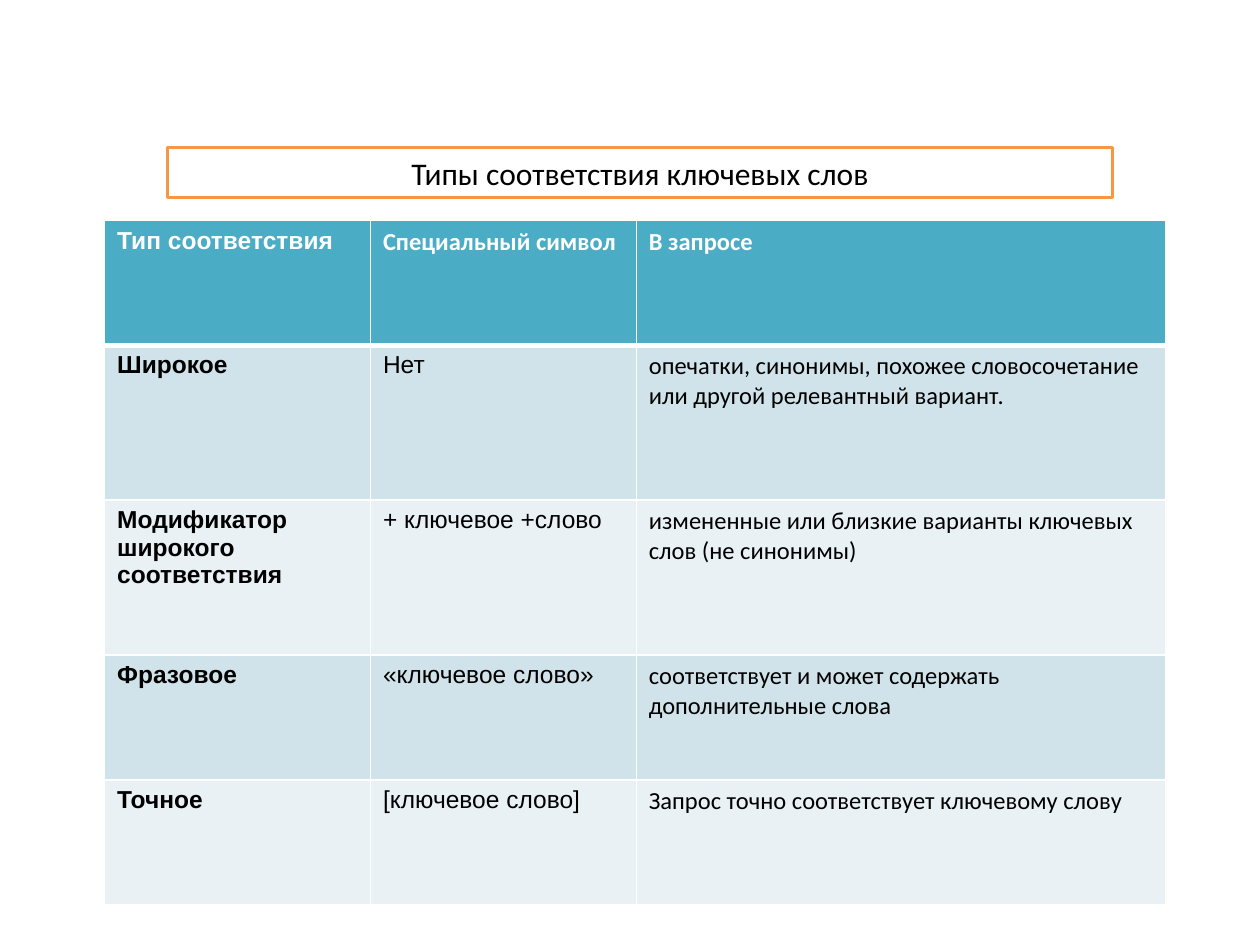
from lxml.etree import SubElement
from pptx import Presentation
from pptx.dml.color import RGBColor
from pptx.enum.shapes import MSO_SHAPE
from pptx.enum.text import MSO_ANCHOR, PP_ALIGN
from pptx.oxml.ns import qn
from pptx.util import Inches, Pt

TITLE = "Типы соответствия ключевых слов"
ROWS = [
    ("Тип соответствия", "Специальный символ", "В запросе"),
    ("Широкое", "Нет",
     "опечатки, синонимы, похожее словосочетание или другой релевантный вариант."),
    ("Модификатор широкого соответствия", "+ ключевое +слово",
     "измененные или близкие варианты ключевых слов (не синонимы)"),
    ("Фразовое", "«ключевое слово»",
     "соответствует и может содержать дополнительные слова"),
    ("Точное", "[ключевое слово]", "Запрос точно соответствует ключевому слову"),
]
COLUMN_WIDTHS = [2.11, 2.11, 4.2]
ROW_HEIGHTS = [0.99, 1.23, 1.23, 0.99, 0.99]

WHITE = RGBColor(0xFF, 0xFF, 0xFF)
BLACK = RGBColor(0x00, 0x00, 0x00)
ORANGE = RGBColor(0xF7, 0x96, 0x46)
HEADER_TEAL = RGBColor(0x4B, 0xAC, 0xC6)
BANDS = [RGBColor(0xE9, 0xF1, 0xF5), RGBColor(0xD0, 0xE3, 0xEA)]


def format_text(paragraph, font_name, size, color, bold=False):
    for run in paragraph.runs:
        run.font.name = font_name
        run.font.size = Pt(size)
        run.font.color.rgb = color
        run.font.bold = bold


def set_borders(cell, widths):
    properties = cell._tc.get_or_add_tcPr()
    for side, width in zip(("lnL", "lnR", "lnT", "lnB"), widths):
        line = SubElement(properties, qn(f"a:{side}"), w=str(Pt(width)))
        fill = SubElement(line, qn("a:solidFill"))
        SubElement(fill, qn("a:srgbClr"), val=str(WHITE))


def add_title(slide):
    shape = slide.shapes.add_shape(
        MSO_SHAPE.RECTANGLE, Inches(1.33), Inches(1.17), Inches(7.5), Inches(0.4))
    shape.shadow.inherit = False
    shape.fill.solid()
    shape.fill.fore_color.rgb = WHITE
    shape.line.color.rgb = ORANGE
    shape.line.width = Pt(2)
    text_frame = shape.text_frame
    text_frame.text = TITLE
    text_frame.word_wrap = True
    text_frame.vertical_anchor = MSO_ANCHOR.TOP
    paragraph = text_frame.paragraphs[0]
    paragraph.alignment = PP_ALIGN.CENTER
    format_text(paragraph, "Calibri", 18, BLACK)


def add_match_table(slide):
    table = slide.shapes.add_table(
        len(ROWS), len(COLUMN_WIDTHS), Inches(0.83), Inches(1.75),
        Inches(sum(COLUMN_WIDTHS)), Inches(sum(ROW_HEIGHTS))).table
    for column, width in zip(table.columns, COLUMN_WIDTHS):
        column.width = Inches(width)
    for row, height in zip(table.rows, ROW_HEIGHTS):
        row.height = Inches(height)

    for row_index, texts in enumerate(ROWS):
        header = row_index == 0
        for column_index, text in enumerate(texts):
            cell = table.cell(row_index, column_index)
            set_borders(cell, (1, 1, 3 if row_index == 1 else 1, 3 if header else 1))
            cell.fill.solid()
            cell.fill.fore_color.rgb = HEADER_TEAL if header else BANDS[row_index % 2]
            cell.text_frame.text = text
            arial = column_index == 0 or (column_index == 1 and not header)
            format_text(
                cell.text_frame.paragraphs[0], "Arial" if arial else "Calibri", 14,
                WHITE if header else BLACK, header or column_index == 0)


def main():
    presentation = Presentation()
    presentation.slide_width = Inches(10)
    presentation.slide_height = Inches(7.5)
    slide = presentation.slides.add_slide(presentation.slide_layouts[6])
    add_title(slide)
    add_match_table(slide)
    presentation.save("out.pptx")


if __name__ == "__main__":
    main()
